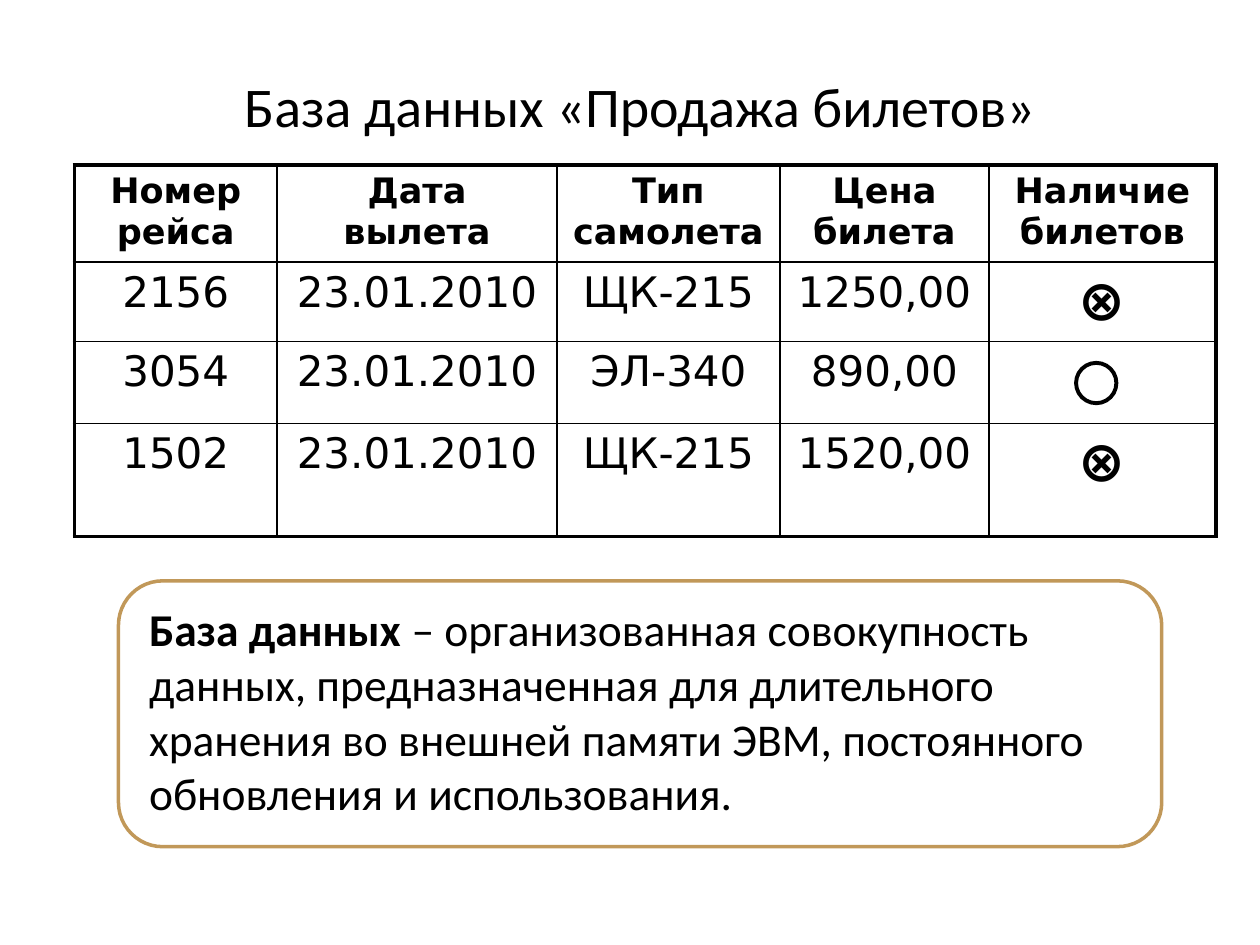
import dataclasses

import lxml.etree
import pptx
import pptx.dml.color
import pptx.enum.shapes
import pptx.enum.text
import pptx.oxml.ns
import pptx.util

Inches = pptx.util.Inches
Pt = pptx.util.Pt
ALIGN = pptx.enum.text.PP_ALIGN
ANCHOR = pptx.enum.text.MSO_ANCHOR
SHAPE = pptx.enum.shapes.MSO_SHAPE


@dataclasses.dataclass(frozen=True)
class Theme:
    ink: str = "000000"
    paper: str = "FFFFFF"
    accent: str = "C19859"
    text_font: str = "Calibri"
    table_font: str = "DejaVu Sans"
    title_size: float = 32
    header_size: float = 20
    cell_size: float = 24
    mark_size: float = 32
    body_size: float = 26
    thin: float = 1
    thick: float = 2.25
    frame: float = 2


MARK = "⊗"
HEADERS = ["Номер рейса", "Дата вылета", "Тип самолета", "Цена билета", "Наличие билетов"]
FLIGHTS = [
    ["2156", "23.01.2010", "ЩК-215", "1250,00", MARK],
    ["3054", "23.01.2010", "ЭЛ-340", "890,00", ""],
    ["1502", "23.01.2010", "ЩК-215", "1520,00", MARK],
]
COLUMN_WIDTHS = [1.61, 2.22, 1.77, 1.66, 1.8]
ROW_HEIGHTS = [0.77, 0.63, 0.65, 0.9]


def rgb(value):
    return pptx.dml.color.RGBColor.from_string(value)


class SlideBuilder:
    def __init__(self, slide, theme):
        self.slide = slide
        self.theme = theme

    def style(self, p, font, size, bold=None, align=ALIGN.CENTER):
        p.alignment = align
        p.font.name = font
        p.font.size = Pt(size)
        p.font.bold = bold
        p.font.color.rgb = rgb(self.theme.ink)

    def title(self, text, left, top, width, height):
        sp = self.slide.shapes.title
        sp.left, sp.top, sp.width, sp.height = map(Inches, (left, top, width, height))
        tf = sp.text_frame
        tf.text = text
        tf.vertical_anchor = ANCHOR.MIDDLE
        self.style(tf.paragraphs[0], self.theme.text_font, self.theme.title_size)

    def borders(self, cell, widths):
        """Draw the cell's edges; widths are in points: left, right, top, bottom."""
        tc_pr = cell._tc.get_or_add_tcPr()
        qn = pptx.oxml.ns.qn
        for i, (side, width) in enumerate(zip("LRTB", widths)):
            ln = lxml.etree.Element(qn(f"a:ln{side}"), w=str(Pt(width)))
            fill = lxml.etree.SubElement(ln, qn("a:solidFill"))
            lxml.etree.SubElement(fill, qn("a:srgbClr"), val=self.theme.ink)
            tc_pr.insert(i, ln)

    def table(self, rows, left, top, col_widths, row_heights):
        t = self.theme
        frame = self.slide.shapes.add_table(
            len(rows), len(col_widths), Inches(left), Inches(top),
            Inches(sum(col_widths)), Inches(sum(row_heights)))
        table = frame.table
        for column, width in zip(table.columns, col_widths):
            column.width = Inches(width)
        for row, height in zip(table.rows, row_heights):
            row.height = Inches(height)
        for r, texts in enumerate(rows):
            for c, text in enumerate(texts):
                cell = table.cell(r, c)
                cell.text = text
                cell.fill.solid()
                cell.fill.fore_color.rgb = rgb(t.paper)
                size = t.header_size if r == 0 else t.mark_size if text == MARK else t.cell_size
                self.style(cell.text_frame.paragraphs[0], t.table_font, size,
                           bold=r == 0 or text == MARK)
                outer = (c == 0, c == len(texts) - 1, r == 0, r == len(rows) - 1)
                self.borders(cell, [t.thick if edge else t.thin for edge in outer])

    def shape(self, kind, left, top, width, height, color, weight):
        sp = self.slide.shapes.add_shape(kind, *map(Inches, (left, top, width, height)))
        sp.shadow.inherit = False
        sp.fill.solid()
        sp.fill.fore_color.rgb = rgb(self.theme.paper)
        sp.line.color.rgb = rgb(color)
        sp.line.width = Pt(weight)
        return sp

    def definition(self, term, meaning, left, top, width, height):
        t = self.theme
        sp = self.shape(SHAPE.ROUNDED_RECTANGLE, left, top, width, height, t.accent, t.frame)
        tf = sp.text_frame
        tf.word_wrap = True
        tf.vertical_anchor = ANCHOR.MIDDLE
        tf.margin_left = Inches(0.14)
        tf.margin_bottom = Inches(0.1)
        p = tf.paragraphs[0]
        for text, bold in ((term, True), (meaning, False)):
            r = p.add_run()
            r.text = text
            r.font.bold = bold
        self.style(p, t.text_font, t.body_size, align=ALIGN.LEFT)


def main():
    prs = pptx.Presentation()
    prs.slide_width, prs.slide_height = Inches(10), Inches(7.5)
    theme = Theme()
    s = SlideBuilder(prs.slides.add_slide(prs.slide_layouts[5]), theme)

    s.title("База данных «Продажа билетов»", 0.67, 0.52, 8.82, 0.63)
    s.table([HEADERS, *FLIGHTS], 0.59, 1.31, COLUMN_WIDTHS, ROW_HEIGHTS)
    s.shape(SHAPE.OVAL, 8.54, 2.88, 0.32, 0.32, theme.ink, theme.thick)
    s.definition(
        "База данных ",
        "– организованная совокупность данных, предназначенная для длительного "
        "хранения во внешней памяти ЭВМ, постоянного обновления и использования.",
        0.94, 4.61, 8.28, 2.11)
    prs.save("out.pptx")


if __name__ == "__main__":
    main()
